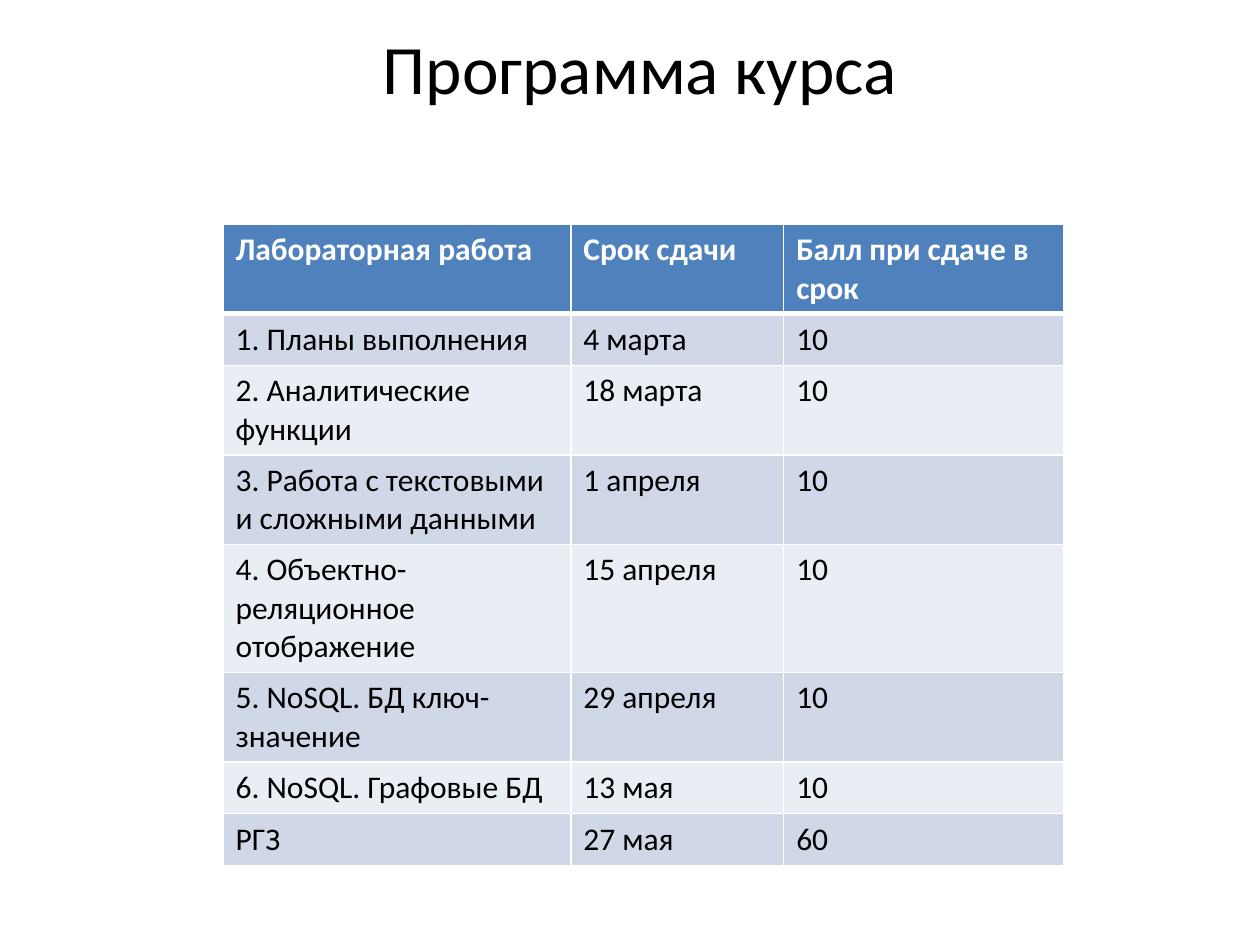
"""Builds the course programme slide with its table of lab deadlines and points."""
import pptx
import pptx.dml.color
import pptx.enum.text
import pptx.oxml
import pptx.oxml.ns
import pptx.util
from pptx.util import Inches

COLORS = {
    "text": "000000",
    "header": "4F81BD",
    "header_text": "FFFFFF",
    "odd_row": "D0D8E8",
    "even_row": "E9EDF4",
    "border": "FFFFFF",
}
FONT = "Calibri"
SCHEDULE = [
    ("Лабораторная работа", "Срок сдачи", "Балл при сдаче в срок"),
    ("1. Планы выполнения", "4 марта", "10"),
    ("2. Аналитические функции", "18 марта", "10"),
    ("3. Работа с текстовыми и сложными данными", "1 апреля", "10"),
    ("4. Объектно-реляционное отображение", "15 апреля", "10"),
    ("5. NoSQL. БД ключ-значение", "29 апреля", "10"),
    ("6. NoSQL. Графовые БД", "13 мая", "10"),
    ("РГЗ", "27 мая", "60"),
]
COLUMN_WIDTHS = [2.76, 1.69, 2.22]
ROW_HEIGHT = 0.41


def add_text(paragraph, text, size, color, bold=False):
    run = paragraph.add_run()
    run.text = text
    run.font.name = FONT
    run.font.size = pptx.util.Pt(size)
    run.font.bold = bold
    run.font.color.rgb = pptx.dml.color.RGBColor.from_string(COLORS[color])


def add_border(cell, side, points):
    cell._tc.get_or_add_tcPr().append(pptx.oxml.parse_xml(
        f'<a:ln{side} {pptx.oxml.ns.nsdecls("a")} w="{pptx.util.Pt(points)}">'
        f'<a:solidFill><a:srgbClr val="{COLORS["border"]}"/></a:solidFill></a:ln{side}>'
    ))


presentation = pptx.Presentation()
presentation.slide_width = Inches(10)
presentation.slide_height = Inches(7.5)
slide = presentation.slides.add_slide(presentation.slide_layouts[5])

title = slide.shapes.title
title.left, title.top = Inches(0.83), Inches(0.29)
title.width, title.height = Inches(8.5), Inches(0.48)
title.text_frame.vertical_anchor = pptx.enum.text.MSO_ANCHOR.MIDDLE
heading = title.text_frame.paragraphs[0]
heading.alignment = pptx.enum.text.PP_ALIGN.CENTER
add_text(heading, "Программа курса", 39.6, "text")

schedule_table = slide.shapes.add_table(
    len(SCHEDULE), len(COLUMN_WIDTHS), Inches(1.77), Inches(1.78),
    Inches(sum(COLUMN_WIDTHS)), Inches(ROW_HEIGHT * len(SCHEDULE)),
).table
for column, width in zip(schedule_table.columns, COLUMN_WIDTHS):
    column.width = Inches(width)

for row_index, entries in enumerate(SCHEDULE):
    is_header = row_index == 0
    fill_color = "header" if is_header else "odd_row" if row_index % 2 else "even_row"
    border_widths = {"L": 1, "R": 1, "T": 3 if row_index == 1 else 1, "B": 3 if is_header else 1}
    schedule_table.rows[row_index].height = Inches(ROW_HEIGHT)
    for column_index, entry in enumerate(entries):
        cell = schedule_table.cell(row_index, column_index)
        for side, points in border_widths.items():
            add_border(cell, side, points)
        cell.fill.solid()
        cell.fill.fore_color.rgb = pptx.dml.color.RGBColor.from_string(COLORS[fill_color])
        add_text(cell.text_frame.paragraphs[0], entry, 18,
                 "header_text" if is_header else "text", is_header)

presentation.save("out.pptx")
